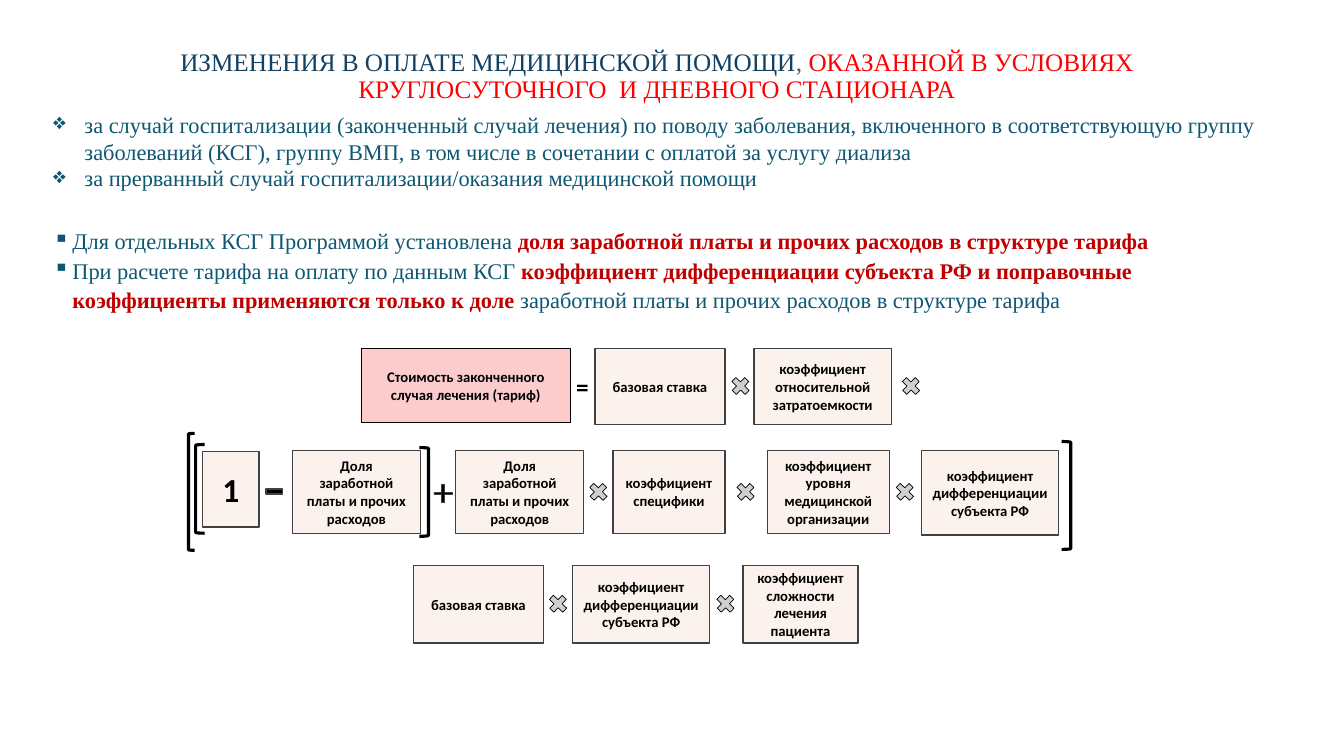
from lxml import etree
from pptx import Presentation
from pptx.dml.color import RGBColor
from pptx.enum import shapes, text
from pptx.oxml import ns
from pptx.util import Inches, Pt

NAVY = RGBColor(0x13, 0x41, 0x63)
TEAL = RGBColor(0x0E, 0x57, 0x72)
GRAY = RGBColor(0x59, 0x59, 0x59)
RED = RGBColor(0xFF, 0, 0)
DARK_RED = RGBColor(0xC0, 0, 0)
BLACK = RGBColor(0, 0, 0)
BORDER = RGBColor(0x40, 0x40, 0x40)
PINK = RGBColor(0xFC, 0xCC, 0xCC)
CREAM = RGBColor(0xFC, 0xF2, 0xED)
SILVER = RGBColor(0xD0, 0xCE, 0xCE)
SERIF, SANS = "Times New Roman", "Calibri"
KIND = shapes.MSO_SHAPE

SHARE = "Доля заработной платы и прочих расходов"
BASE_RATE = "базовая ставка"
REGION = "коэффициент дифференциации субъекта РФ"


def add_run(p, content, size=10.5, font=SANS, color=BLACK, bold=False):
    r = p.add_run()
    r.text = content
    r.font.size, r.font.name, r.font.bold = Pt(size), font, bold
    r.font.color.rgb = color


def add_textbox(slide, left, top, width, height, wrap=True):
    sp = slide.shapes.add_textbox(*map(Inches, (left, top, width, height)))
    sp.text_frame.word_wrap = wrap
    return sp.text_frame


def add_shape(slide, kind, left, top, width, height, fill=None,
              line=BORDER, weight=1, rotation=0):
    sp = slide.shapes.add_shape(kind, *map(Inches, (left, top, width, height)))
    sp.shadow.inherit = False
    sp.rotation = rotation
    if fill is None:
        sp.fill.background()
    else:
        sp.fill.solid()
        sp.fill.fore_color.rgb = fill
    sp.line.color.rgb = line
    sp.line.width = Pt(weight)
    return sp


# Formula parts
def add_factor(slide, label, left, top, width, height, size=10.5,
               fill=CREAM, **border):
    sp = add_shape(slide, KIND.RECTANGLE, left, top, width, height, fill, **border)
    tf = sp.text_frame
    tf.word_wrap = True
    tf.vertical_anchor = text.MSO_ANCHOR.MIDDLE
    p = tf.paragraphs[0]
    p.alignment = text.PP_ALIGN.CENTER
    add_run(p, label, size, bold=True)


def add_times(slide, left, top):
    add_shape(slide, KIND.MATH_PLUS, left, top, 0.25, 0.24, SILVER, BLACK, 0.5, 44.2)


def add_bracket(slide, left, top, width, height, closing=False):
    add_shape(slide, KIND.LEFT_BRACKET, left, top, width, height, None,
              BLACK, 2.25, 180 if closing else 0)


# Heading
def add_heading(slide, left, top, width, height):
    tf = add_textbox(slide, left, top, width, height)
    tf.vertical_anchor = text.MSO_ANCHOR.MIDDLE
    p = tf.paragraphs[0]
    p.alignment = text.PP_ALIGN.CENTER
    p.line_spacing = 0.9
    p.space_before = Pt(10)
    for content, color in (
            ("ИЗМЕНЕНИЯ В ОПЛАТЕ МЕДИЦИНСКОЙ ПОМОЩИ", NAVY),
            (", ", GRAY),
            ("ОКАЗАННОЙ В УСЛОВИЯХ КРУГЛОСУТОЧНОГО  И ДНЕВНОГО СТАЦИОНАРА", RED)):
        add_run(p, content, 18, SERIF, color)


# Bulleted list: every item is a list of (text, emphasised) pairs
def add_bullets(slide, left, top, width, height, items, mark, indent, spacing=1.0):
    tf = add_textbox(slide, left, top, width, height)
    for i, item in enumerate(items):
        p = tf.add_paragraph() if i else tf.paragraphs[0]
        p.line_spacing = spacing
        ppr = p._p.get_or_add_pPr()
        ppr.set("marL", str(Inches(indent)))
        ppr.set("indent", str(-Inches(indent)))
        etree.SubElement(ppr, ns.qn("a:buChar")).set("char", mark)
        for content, strong in item:
            add_run(p, content, 16, SERIF, DARK_RED if strong else TEAL, strong)


# Row 1: the tariff, the base rate and the cost weight
def add_tariff_row(slide, left, top):
    add_factor(slide, "Стоимость законченного случая лечения (тариф)",
               left, top, 2.08, 0.73, fill=PINK, line=BLACK, weight=0.5)
    p = add_textbox(slide, left + 2.03, top + 0.17, 0.39, 0.4, wrap=False).paragraphs[0]
    p.alignment = text.PP_ALIGN.CENTER
    add_run(p, "= ", 18, bold=True)
    add_factor(slide, BASE_RATE, left + 2.32, top, 1.29, 0.75)
    add_factor(slide, "коэффициент относительной затратоемкости",
               left + 3.9, top, 1.36, 0.75)
    for x in (3.64, 5.33):
        add_times(slide, left + x, top + 0.25)


# Row 2: the bracketed sum
def add_share_row(slide, left, top):
    add_bracket(slide, left, top, 0.06, 1.16)
    add_bracket(slide, left + 0.07, top + 0.11, 0.09, 0.88)
    add_bracket(slide, left + 2.29, top + 0.14, 0.09, 0.88, closing=True)
    add_bracket(slide, left + 8.66, top + 0.08, 0.09, 1.07, closing=True)
    add_factor(slide, "1", left + 0.14, top + 0.18, 0.56, 0.75, size=24)
    for label, x, width, height in (
            (SHARE, 1.03, 1.27, 0.82),
            (SHARE, 2.65, 1.27, 0.82),
            ("коэффициент специфики", 4.21, 1.11, 0.82),
            ("коэффициент уровня медицинской организации", 5.74, 1.21, 0.82),
            (REGION, 7.27, 1.36, 0.84)):
        add_factor(slide, label, left + x, top + 0.17, width, height)
    add_shape(slide, KIND.RECTANGLE, left + 0.77, top + 0.55, 0.16, 0.05, BLACK)
    plus = add_shape(slide, KIND.MATH_PLUS, left + 2.4, top + 0.47, 0.25, 0.25,
                     BLACK, weight=0.5, rotation=90)
    plus.adjustments[0] = 0.106
    for x in (3.94, 5.4, 6.98):
        add_times(slide, left + x, top + 0.46)


# Row 3: the patient complexity term
def add_complexity_row(slide, left, top):
    for label, x, width in (
            (BASE_RATE, 0, 1.29),
            (REGION, 1.58, 1.36),
            ("коэффициент сложности лечения пациента", 3.27, 1.14)):
        add_factor(slide, label, left + x, top, width, 0.77)
    for x in (1.31, 2.97):
        add_times(slide, left + x, top + 0.26)


def main():
    prs = Presentation()
    prs.slide_width, prs.slide_height = Inches(13.33), Inches(7.5)
    slide = prs.slides.add_slide(prs.slide_layouts[6])
    add_heading(slide, 0.84, 0.29, 11.35, 0.95)
    add_bullets(slide, 0.43, 1.05, 12.56, 1.51, [
        [("за случай госпитализации (законченный случай лечения) по поводу "
          "заболевания, включенного в соответствующую группу заболеваний (КСГ), "
          "группу ВМП, в том числе в сочетании с оплатой за услугу диализа", False)],
        [("за прерванный случай госпитализации/оказания медицинской помощи", False)],
    ], "❖", 0.31)
    add_bullets(slide, 0.43, 2.18, 11.27, 0.99, [
        [("Для отдельных КСГ Программой установлена ", False),
         ("доля заработной платы и прочих расходов в структуре тарифа", True)],
        [("При расчете тарифа на оплату по данным КСГ ", False),
         ("коэффициент дифференциации субъекта РФ и поправочные "
          "коэффициенты применяются только к доле ", True),
         ("заработной платы и прочих расходов в структуре тарифа", False)],
    ], "▪", 0.19, 1.1)
    add_tariff_row(slide, 3.58, 3.46)
    add_share_row(slide, 1.87, 4.3)
    add_complexity_row(slide, 4.1, 5.61)
    prs.save("out.pptx")


if __name__ == "__main__":
    main()
